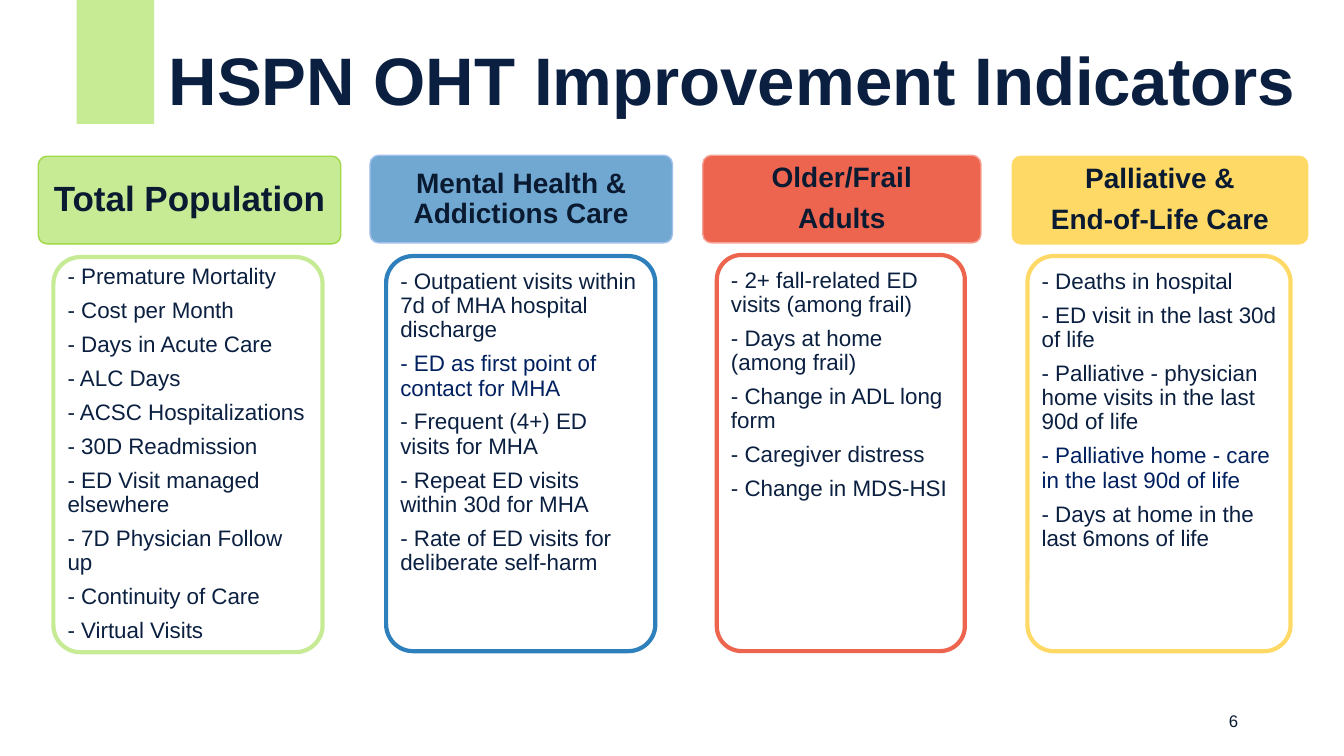
from dataclasses import dataclass

from lxml import etree
from pptx import Presentation
from pptx import util as u
from pptx.dml.color import RGBColor
from pptx.enum import shapes, text
from pptx.oxml.ns import qn

EMU_PER_PX = 9144
CORNER = 0.1
CORNER_TEXT_INSET = 0.29


@dataclass(frozen=True)
class Theme:
    font: str = "Arial"
    white: str = "FFFFFF"
    navy: str = "0B2040"
    dark: str = "0A1A31"
    highlight: str = "002060"
    green: str = "C7EA95"
    blue: str = "2E80BC"
    red: str = "EE654F"
    yellow: str = "FFD966"
    title_size: int = 48
    header_size: int = 20
    wide_header_size: int = 25
    item_size: int = 16
    number_size: int = 12


THEME = Theme()


@dataclass(frozen=True)
class Area:
    left: int
    top: int
    width: int
    height: int

    def emu(self) -> list[int]:
        return [side * EMU_PER_PX for side in (self.left, self.top, self.width, self.height)]


@dataclass(frozen=True)
class TextStyle:
    size: int
    color: str
    bold: bool = False
    align: text.PP_ALIGN = text.PP_ALIGN.LEFT
    anchor: text.MSO_ANCHOR = text.MSO_ANCHOR.TOP
    line_spacing: float = 1.0
    space_after: int = 0


@dataclass(frozen=True)
class Column:
    header: tuple[str, ...]
    header_area: Area
    body_area: Area
    color: str
    header_line: str
    items: tuple[str, ...]
    highlighted: int = -1
    opacity: int = 100
    header_size: int = THEME.header_size
    header_inset: int = 11
    header_gap: int = 8
    anchor: text.MSO_ANCHOR = text.MSO_ANCHOR.TOP


COLUMNS = (
    Column(
        ("Total Population",), Area(38, 155, 300, 87), Area(53, 255, 267, 392),
        THEME.green, "9DDA45",
        ("- Premature Mortality", "- Cost per Month", "- Days in Acute Care", "- ALC Days",
         "- ACSC Hospitalizations", "- 30D Readmission", "- ED Visit managed elsewhere",
         "- 7D Physician Follow up", "- Continuity of Care", "- Virtual Visits"),
        header_size=THEME.wide_header_size, header_inset=13, header_gap=11,
        anchor=text.MSO_ANCHOR.MIDDLE,
    ),
    Column(
        ("Mental Health & Addictions Care",), Area(367, 154, 300, 87), Area(383, 254, 267, 392),
        THEME.blue, "A1C0EC",
        ("- Outpatient visits within 7d of MHA hospital discharge",
         "- ED as first point of contact for MHA", "- Frequent (4+) ED visits for MHA",
         "- Repeat ED visits within 30d for MHA", "- Rate of ED visits for deliberate self-harm"),
        highlighted=1, opacity=68,
    ),
    Column(
        ("Older/Frail", "Adults"), Area(697, 154, 276, 87), Area(711, 253, 246, 393),
        THEME.red, "F5A395",
        ("- 2+ fall-related ED visits (among frail)", "- Days at home (among frail)",
         "- Change in ADL long form", "- Caregiver distress", "- Change in MDS-HSI"),
    ),
    Column(
        ("Palliative &", "End-of-Life Care"), Area(1004, 155, 293, 87), Area(1019, 254, 261, 392),
        THEME.yellow, THEME.yellow,
        ("- Deaths in hospital", "- ED visit in the last 30d of life",
         "- Palliative - physician home visits in the last 90d of life",
         "- Palliative home - care in the last 90d of life",
         "- Days at home in the last 6mons of life"),
        highlighted=3,
    ),
)


def write(frame, lines: tuple[str, ...], style: TextStyle, highlighted: int = -1) -> None:
    frame.word_wrap = True
    frame.vertical_anchor = style.anchor
    for index, line in enumerate(lines):
        para = frame.paragraphs[0] if index == 0 else frame.add_paragraph()
        para.text = line
        para.alignment = style.align
        para.line_spacing = style.line_spacing
        para.space_after = u.Pt(style.space_after)
        para.font.name = THEME.font
        para.font.size = u.Pt(style.size)
        para.font.bold = style.bold
        color = THEME.highlight if index == highlighted else style.color
        para.font.color.rgb = RGBColor.from_string(color)


def add_text(page, area: Area, line: str, style: TextStyle) -> None:
    box = page.shapes.add_textbox(*area.emu())
    write(box.text_frame, (line,), style)


def add_block(page, kind: shapes.MSO_SHAPE, area: Area, fill: str, opacity: int = 100):
    box = page.shapes.add_shape(kind, *area.emu())
    box.shadow.inherit = False
    box.fill.solid()
    box.fill.fore_color.rgb = RGBColor.from_string(fill)
    if opacity < 100:
        color = box.fill._xPr.find(qn("a:solidFill"))[0]
        etree.SubElement(color, qn("a:alpha"), val=str(opacity * 1000))
    box.line.fill.background()
    return box


def add_card(page, area: Area, fill: str, line: str, line_width: int, inset: int,
             opacity: int = 100):
    box = add_block(page, shapes.MSO_SHAPE.ROUNDED_RECTANGLE, area, fill, opacity)
    box.adjustments[0] = CORNER
    box.line.color.rgb = RGBColor.from_string(line)
    box.line.width = u.Pt(line_width)
    radius = CORNER * min(area.width, area.height)
    margin = round((inset - CORNER_TEXT_INSET * radius) * EMU_PER_PX)
    frame = box.text_frame
    frame.margin_left = frame.margin_right = margin
    frame.margin_top = frame.margin_bottom = margin
    return frame


def add_column(page, column: Column) -> None:
    header = add_card(page, column.header_area, column.color, column.header_line, 1,
                      column.header_inset, column.opacity)
    write(header, column.header,
          TextStyle(column.header_size, THEME.dark, True, text.PP_ALIGN.CENTER,
                    text.MSO_ANCHOR.MIDDLE, 0.9, column.header_gap))
    body = add_card(page, column.body_area, THEME.white, column.color, 3, 14)
    write(body, column.items,
          TextStyle(THEME.item_size, THEME.navy, anchor=column.anchor,
                    line_spacing=0.9, space_after=7),
          column.highlighted)


def main() -> None:
    deck = Presentation()
    deck.slide_width = 1333 * EMU_PER_PX
    deck.slide_height = 750 * EMU_PER_PX
    page = deck.slides.add_slide(deck.slide_layouts[6])
    add_block(page, shapes.MSO_SHAPE.RECTANGLE, Area(76, 0, 77, 123), THEME.green)
    add_text(page, Area(127, 33, 1199, 91), "HSPN OHT Improvement Indicators",
             TextStyle(THEME.title_size, THEME.navy, True, text.PP_ALIGN.CENTER))
    for column in COLUMNS:
        add_column(page, column)
    add_text(page, Area(938, 695, 300, 40), "6",
             TextStyle(THEME.number_size, THEME.dark, align=text.PP_ALIGN.RIGHT,
                       anchor=text.MSO_ANCHOR.MIDDLE))
    deck.save("out.pptx")


if __name__ == "__main__":
    main()
